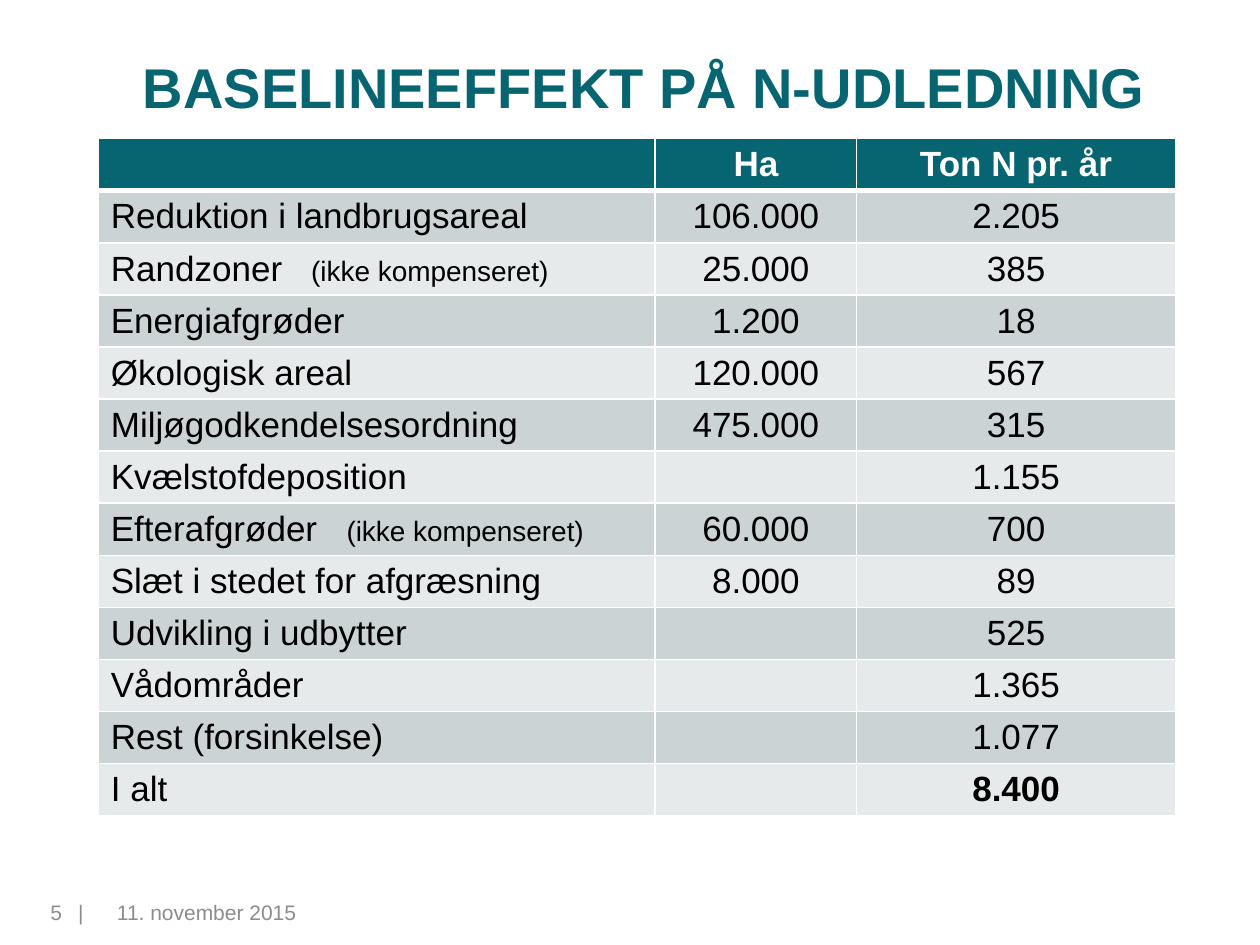
from lxml import etree
from pptx import Presentation
from pptx.dml.color import RGBColor
from pptx.enum.text import MSO_ANCHOR, PP_ALIGN
from pptx.oxml.ns import qn
from pptx.util import Inches, Pt

LEFT, CENTER = PP_ALIGN.LEFT, PP_ALIGN.CENTER
MIDDLE = MSO_ANCHOR.MIDDLE

TEAL = RGBColor(0x07, 0x64, 0x71)
GREY = RGBColor(0x8C, 0x8C, 0x8C)
BAND_DARK = RGBColor(0xCC, 0xD3, 0xD5)
BAND_LIGHT = RGBColor(0xE7, 0xEA, 0xEB)
BLACK = RGBColor(0, 0, 0)
WHITE = RGBColor(0xFF, 0xFF, 0xFF)

# Content
TITLE = "BASELINEEFFEKT PÅ N-UDLEDNING"
DATE = "11. november 2015"
PAGE_NUMBER = "5"
NOTE = "(ikke kompenseret)"
HEADER = ("", "Ha", "Ton N pr. år")
MEASURES = [
    ("Reduktion i landbrugsareal", "106.000", "2.205"),
    ("Randzoner", "25.000", "385"),
    ("Energiafgrøder", "1.200", "18"),
    ("Økologisk areal", "120.000", "567"),
    ("Miljøgodkendelsesordning", "475.000", "315"),
    ("Kvælstofdeposition", "", "1.155"),
    ("Efterafgrøder", "60.000", "700"),
    ("Slæt i stedet for afgræsning", "8.000", "89"),
    ("Udvikling i udbytter", "", "525"),
    ("Vådområder", "", "1.365"),
    ("Rest (forsinkelse)", "", "1.077"),
    ("I alt", "", "8.400"),
]
# Where the note starts, in inches from the start of the label
NOTE_STOPS = {"Randzoner": 1.59, "Efterafgrøder": 1.87}

# Layout in inches
COLUMN_WIDTHS = (4.42, 1.6, 2.53)
ROW_HEIGHT = 0.41
CELL_MARGINS = {"margin_left": 0.1, "margin_right": 0.1,
                "margin_top": 0.04, "margin_bottom": 0.04}


def place(shape, left, top, width, height):
    box = {"left": left, "top": top, "width": width, "height": height}
    for side, inches in box.items():
        setattr(shape, side, Inches(inches))


def add_run(paragraph, text, size, color, bold=False):
    run = paragraph.add_run()
    run.text = text
    font_format = {"name": "Arial", "size": Pt(size), "bold": bold}
    for attribute, value in font_format.items():
        setattr(run.font, attribute, value)
    run.font.color.rgb = color


def add_tab_stop(paragraph, inches):
    tab_list = etree.SubElement(paragraph._p.get_or_add_pPr(), qn("a:tabLst"))
    etree.SubElement(tab_list, qn("a:tab"), pos=str(Inches(inches)), algn="l")


def add_borders(cell, bottom, top):
    properties = cell._tc.get_or_add_tcPr()
    widths = {"a:lnL": 1, "a:lnR": 1, "a:lnT": top, "a:lnB": bottom}
    for index, (side, width) in enumerate(widths.items()):
        line = etree.Element(qn(side), w=str(Pt(width)))
        fill = etree.SubElement(line, qn("a:solidFill"))
        etree.SubElement(fill, qn("a:srgbClr"), val=str(WHITE))
        properties.insert(index, line)


def add_footer(slide, box, text, indent=0.1, stop=None):
    footer = slide.shapes.add_textbox(0, 0, 0, 0)
    place(footer, *box)
    footer.text_frame.word_wrap = True
    footer.text_frame.margin_left = Inches(indent)
    footer.text_frame.margin_right = 0
    paragraph = footer.text_frame.paragraphs[0]
    if stop:
        add_tab_stop(paragraph, stop)
    add_run(paragraph, text, 12, GREY)


def fill_cell(cell, row, column, text):
    is_header = row == 0
    for side, inches in CELL_MARGINS.items():
        setattr(cell, side, Inches(inches))
    cell.vertical_anchor = MIDDLE
    cell.fill.solid()
    band = BAND_DARK if row % 2 else BAND_LIGHT
    cell.fill.fore_color.rgb = TEAL if is_header else band
    add_borders(cell, bottom=3 if is_header else 1, top=3 if row == 1 else 1)
    if not text:
        return
    paragraph = cell.text_frame.paragraphs[0]
    paragraph.alignment = CENTER if column else LEFT
    is_total = row == len(MEASURES) and column == 2
    color = WHITE if is_header else BLACK
    if text in NOTE_STOPS:
        add_tab_stop(paragraph, NOTE_STOPS[text])
        add_run(paragraph, text + "\t", 20, color)
        add_run(paragraph, NOTE, 16, color)
    else:
        add_run(paragraph, text, 20, color, bold=is_header or is_total)


def main():
    presentation = Presentation()
    presentation.slide_width = Inches(10)
    presentation.slide_height = Inches(7.5)
    slide = presentation.slides.add_slide(presentation.slide_layouts[5])

    # Title
    title = slide.shapes.title
    place(title, 0.51, 0.29, 9.21, 0.79)
    title.text_frame.vertical_anchor = MIDDLE
    heading = title.text_frame.paragraphs[0]
    heading.alignment = CENTER
    add_run(heading, TITLE, 32, TEAL, bold=True)

    # Footer
    add_footer(slide, (0.83, 7.09, 2.33, 0.4), DATE)
    add_footer(slide, (0, 7.09, 0.78, 0.4), PAGE_NUMBER + "\t|",
               indent=0.4, stop=0.22)

    # Table of measures
    rows = [HEADER] + MEASURES
    table = slide.shapes.add_table(
        len(rows), len(HEADER), Inches(0.78), Inches(1.1),
        Inches(sum(COLUMN_WIDTHS)), Inches(ROW_HEIGHT * len(rows))).table
    for column, width in zip(table.columns, COLUMN_WIDTHS):
        column.width = Inches(width)
    for row, values in enumerate(rows):
        table.rows[row].height = Inches(ROW_HEIGHT)
        for column, text in enumerate(values):
            fill_cell(table.cell(row, column), row, column, text)

    presentation.save("out.pptx")


if __name__ == "__main__":
    main()
